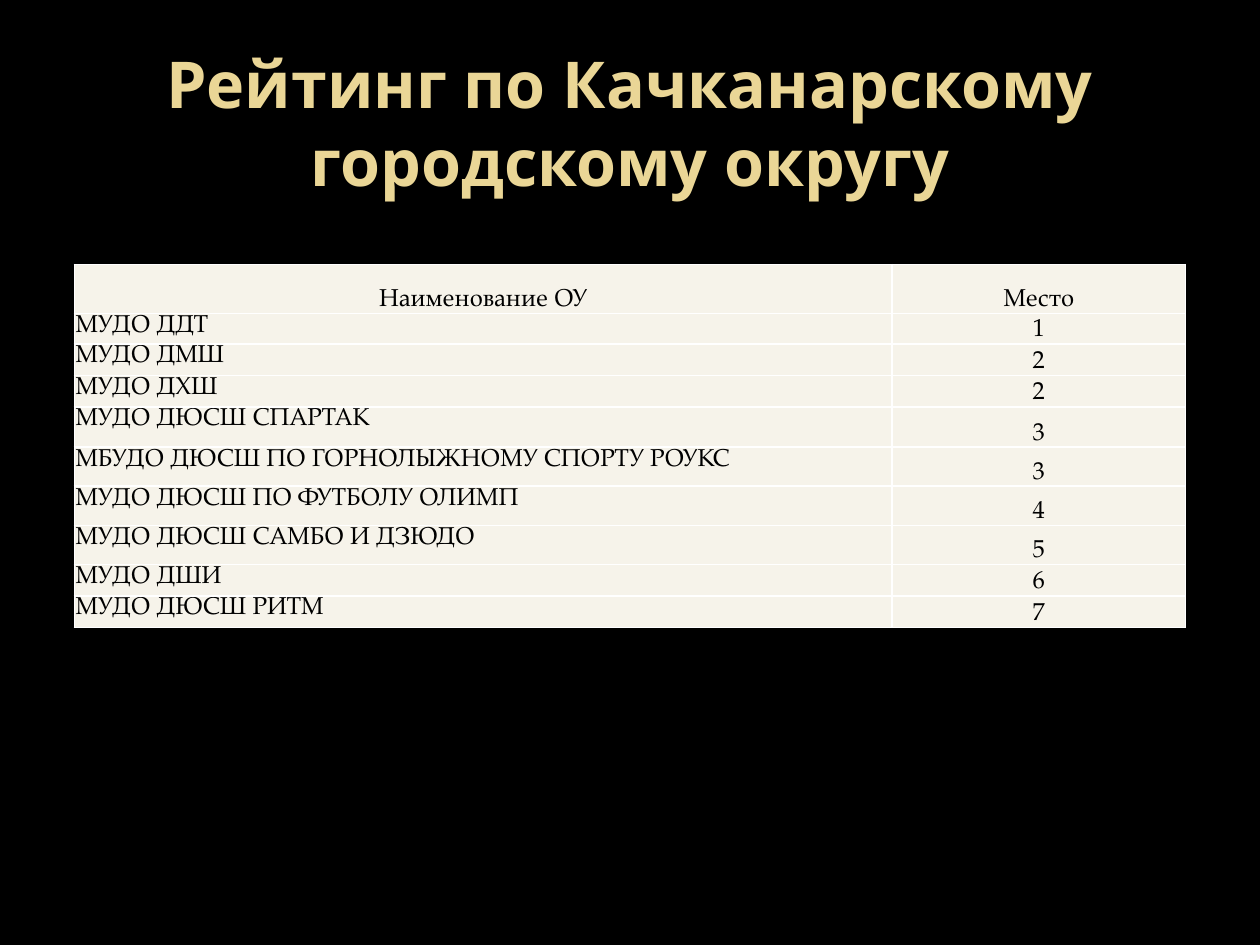
import typing

import lxml.etree
import pptx
import pptx.dml.color
import pptx.enum.text
import pptx.oxml.ns
import pptx.util

Inches = pptx.util.Inches
Pt = pptx.util.Pt
ALIGN = pptx.enum.text.PP_ALIGN
ANCHOR = pptx.enum.text.MSO_ANCHOR

COLORS = {"back": "000000", "title": "EAD696", "cell": "F6F3EA",
          "text": "000000", "line": "FFFFFF"}


class Entry(typing.NamedTuple):
    name: str
    place: str
    height: float


HEAD = Entry("Наименование ОУ", "Место", 0.39)
RATING = [
    Entry("МУДО ДДТ", "1", 0.24),
    Entry("МУДО ДМШ", "2", 0.25),
    Entry("МУДО ДХШ", "2", 0.25),
    Entry("МУДО ДЮСШ СПАРТАК", "3", 0.32),
    Entry("МБУДО ДЮСШ ПО ГОРНОЛЫЖНОМУ СПОРТУ РОУКС", "3", 0.31),
    Entry("МУДО ДЮСШ ПО ФУТБОЛУ ОЛИМП", "4", 0.31),
    Entry("МУДО ДЮСШ САМБО И ДЗЮДО", "5", 0.31),
    Entry("МУДО ДШИ", "6", 0.25),
    Entry("МУДО ДЮСШ РИТМ", "7", 0.25),
]
WIDTHS = [6.49, 2.33]


def color(name: str) -> pptx.dml.color.RGBColor:
    return pptx.dml.color.RGBColor.from_string(COLORS[name])


def add_text(frame, text: str, font: str, size: float, tint: str,
             align, pitch: float, bold: bool = False) -> None:
    """Add one run to the first paragraph; pitch is the line height in points."""
    para = frame.paragraphs[0]
    para.alignment = align
    para.line_spacing = Pt(pitch)
    run = para.add_run()
    run.text = text
    run.font.name = font
    run.font.size = Pt(size)
    run.font.bold = bold
    run.font.color.rgb = color(tint)


def add_title(slide, text: str) -> None:
    box = slide.shapes.add_textbox(Inches(0.5), Inches(0.3), Inches(9), Inches(1.25))
    frame = box.text_frame
    frame.word_wrap = True
    frame.vertical_anchor = ANCHOR.MIDDLE
    frame.margin_top = Inches(0.13)
    add_text(frame, text, "Open Sans", 36.9, "title", ALIGN.CENTER, 44.6, bold=True)


def add_borders(cell) -> None:
    props = cell._tc.get_or_add_tcPr()
    qn = pptx.oxml.ns.qn
    for side in ("lnL", "lnR", "lnT", "lnB"):
        line = lxml.etree.SubElement(props, qn(f"a:{side}"), w=str(Pt(1)))
        fill = lxml.etree.SubElement(line, qn("a:solidFill"))
        lxml.etree.SubElement(fill, qn("a:srgbClr"), val=COLORS["line"])


def fill_cell(cell, text: str, center: bool) -> None:
    """Centred cells sit at the bottom of the row, the others at the top left."""
    cell.margin_left = cell.margin_right = cell.margin_top = Inches(0.01)
    cell.margin_bottom = 0
    cell.vertical_anchor = ANCHOR.BOTTOM if center else ANCHOR.TOP
    add_borders(cell)
    cell.fill.solid()
    cell.fill.fore_color.rgb = color("cell")
    align = ALIGN.CENTER if center else ALIGN.LEFT
    add_text(cell.text_frame, text, "TeX Gyre Pagella", 14, "text", align, 14)


def add_rating(slide, rows: list[Entry]) -> None:
    height = sum(row.height for row in rows)
    frame = slide.shapes.add_table(len(rows), len(WIDTHS), Inches(0.59), Inches(2.1),
                                   Inches(sum(WIDTHS)), Inches(height))
    table = frame.table
    table.first_row = table.horz_banding = False
    for col, width in zip(table.columns, WIDTHS):
        col.width = Inches(width)
    for index, row in enumerate(rows):
        table.rows[index].height = Inches(row.height)
        fill_cell(table.cell(index, 0), row.name, center=row is HEAD)
        fill_cell(table.cell(index, 1), row.place, center=True)


def main() -> None:
    deck = pptx.Presentation()
    deck.slide_width = Inches(10)
    deck.slide_height = Inches(7.5)
    slide = deck.slides.add_slide(deck.slide_layouts[6])
    slide.background.fill.solid()
    slide.background.fill.fore_color.rgb = color("back")
    add_title(slide, "Рейтинг по Качканарскому городскому округу")
    add_rating(slide, [HEAD, *RATING])
    deck.save("out.pptx")


if __name__ == "__main__":
    main()
